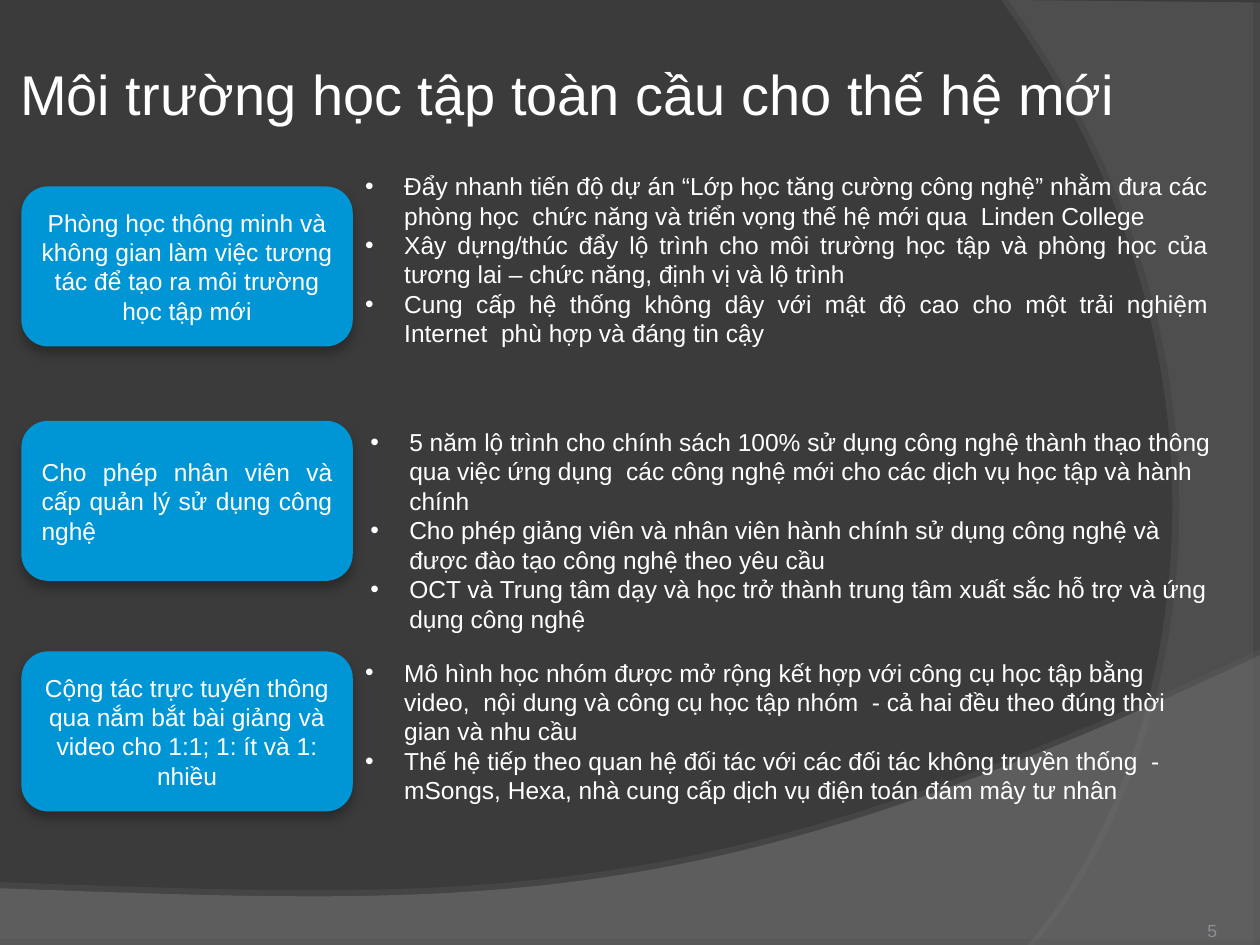
from lxml import etree
from pptx import Presentation
from pptx.dml.color import RGBColor
from pptx.enum.shapes import MSO_SHAPE
from pptx.enum.text import MSO_ANCHOR, MSO_AUTO_SIZE, PP_ALIGN
from pptx.oxml.ns import qn
from pptx.util import Inches, Pt

ROUNDED = MSO_SHAPE.ROUNDED_RECTANGLE
TOP, MIDDLE, BOTTOM = MSO_ANCHOR.TOP, MSO_ANCHOR.MIDDLE, MSO_ANCHOR.BOTTOM
LEFT, CENTER, RIGHT, JUSTIFY = (PP_ALIGN.LEFT, PP_ALIGN.CENTER,
                                PP_ALIGN.RIGHT, PP_ALIGN.JUSTIFY)
GROW = MSO_AUTO_SIZE.SHAPE_TO_FIT_TEXT


def rgb(value):
    return RGBColor.from_string(value)


def curve(p0, p1, p2, p3, steps=48):
    """Points along a cubic Bezier curve, without its start."""
    points = []
    for i in range(1, steps + 1):
        t = i / steps
        u = 1 - t
        points.append(tuple(u**3 * a + 3 * u * u * t * b + 3 * u * t * t * c + t**3 * d
                            for a, b, c, d in zip(p0, p1, p2, p3)))
    return points


def set_alpha(color, percent):
    etree.SubElement(color, qn("a:alpha"), val=str(percent * 1000))


class SlideBuilder:
    font = "Arial"
    white = "FFFFFF"
    accent = "0096D6"
    body_size = 14
    indent = Inches(0.31)

    def __init__(self, slide, background):
        self.slide = slide
        fill = slide.background.fill
        fill.solid()
        fill.fore_color.rgb = rgb(background)

    def shadow(self, sp, color, alpha, blur, dist, angle):
        sp.shadow.inherit = False
        effects = sp._element.spPr.find(qn("a:effectLst"))
        outer = etree.SubElement(effects, qn("a:outerShdw"), blurRad=str(Pt(blur)),
                                 dist=str(Pt(dist)), dir=str(angle * 60000),
                                 algn="ctr", rotWithShape="0")
        set_alpha(etree.SubElement(outer, qn("a:srgbClr"), val=color), alpha)

    def fill(self, sp, color):
        sp.fill.solid()
        sp.fill.fore_color.rgb = rgb(color)
        sp.line.fill.background()

    def wave(self, points, color, alpha, shadow):
        """Translucent background outline through the points, in inches."""
        emu = [(Inches(x), Inches(y)) for x, y in points]
        builder = self.slide.shapes.build_freeform(*emu[0], scale=1.0)
        builder.add_line_segments(emu[1:], close=True)
        sp = builder.convert_to_shape()
        self.fill(sp, color)
        set_alpha(sp._element.spPr.find(qn("a:solidFill"))[0], alpha)
        self.shadow(sp, *shadow)

    def paragraphs(self, tf, texts, align=LEFT, size=body_size, color=white,
                   bulleted=False):
        for i, text in enumerate(texts):
            p = tf.paragraphs[0] if i == 0 else tf.add_paragraph()
            p.alignment = align
            r = p.add_run()
            r.text = text
            r.font.name = self.font
            r.font.size = Pt(size)
            r.font.color.rgb = rgb(color)
            if bulleted:
                pPr = p._p.get_or_add_pPr()
                pPr.set("marL", str(self.indent))
                pPr.set("indent", str(-self.indent))
                etree.SubElement(pPr, qn("a:buFont"), typeface=self.font)
                etree.SubElement(pPr, qn("a:buChar"), char="•")

    def text(self, box, texts, anchor=TOP, insets=(0.1, 0.05, 0.1, 0.05), wrap=True,
             **style):
        tf = self.slide.shapes.add_textbox(*map(Inches, box)).text_frame
        tf.word_wrap = wrap
        tf.vertical_anchor = anchor
        (tf.margin_left, tf.margin_top,
         tf.margin_right, tf.margin_bottom) = map(Inches, insets)
        self.paragraphs(tf, texts, **style)
        return tf

    def title(self, box, text):
        tf = self.text(box, [text], BOTTOM, (0.05, 0.05, 0.05, 0), size=32)
        tf.paragraphs[0].line_spacing = 0.9

    def bullets(self, box, texts, align):
        tf = self.text(box, texts, align=align, bulleted=True)
        tf.auto_size = GROW

    def card(self, box, text, align):
        sp = self.slide.shapes.add_shape(ROUNDED, *map(Inches, box))
        self.fill(sp, self.accent)
        self.shadow(sp, "000000", 27, 6, 4, 90)
        sp.text_frame.word_wrap = True
        sp.text_frame.vertical_anchor = MIDDLE
        self.paragraphs(sp.text_frame, [text], align)


# card top, card text, card alignment, bullet box, bullet alignment, bullets
TOPICS = [
    (1.48, "Phòng học thông minh và không gian làm việc tương tác để tạo ra "
           "môi trường học tập mới", CENTER, (2.8, 1.31, 6.89, 1.51), JUSTIFY, [
        "Đẩy nhanh tiến độ dự án “Lớp học tăng cường công nghệ” nhằm đưa các "
        "phòng học  chức năng và triển vọng thế hệ mới qua  Linden College",
        "Xây dựng/thúc đẩy lộ trình cho môi trường học tập và phòng học của "
        "tương lai – chức năng, định vị và lộ trình",
        "Cung cấp hệ thống không dây với mật độ cao cho một trải nghiệm "
        "Internet  phù hợp và đáng tin cậy"]),
    (3.34, "Cho phép nhân viên và cấp quản lý sử dụng công nghệ",
     JUSTIFY, (2.84, 3.34, 6.89, 1.75), LEFT, [
        "5 năm lộ trình cho chính sách 100% sử dụng công nghệ thành thạo thông "
        "qua việc ứng dụng  các công nghệ mới cho các dịch vụ học tập và hành  chính",
        "Cho phép giảng viên và nhân viên hành chính sử dụng công nghệ và "
        "được đào tạo công nghệ theo yêu cầu",
        "OCT và Trung tâm dạy và học trở thành trung tâm xuất sắc hỗ trợ và ứng "
        "dụng công nghệ"]),
    (5.17, "Cộng tác trực tuyến thông qua nắm bắt bài giảng và video cho 1:1; "
           "1: ít và 1: nhiều", CENTER, (2.8, 5.17, 6.89, 1.75), LEFT, [
        "Mô hình học nhóm được mở rộng kết hợp với công cụ học tập bằng "
        "video,  nội dung và công cụ học tập nhóm  - cả hai đều theo đúng thời "
        "gian và nhu cầu",
        "Thế hệ tiếp theo quan hệ đối tác với các đối tác không truyền thống  - "
        "mSongs, Hexa, nhà cung cấp dịch vụ điện toán đám mây tư nhân"]),
]


def main():
    prs = Presentation()
    prs.slide_width, prs.slide_height = Inches(10), Inches(7.5)
    s = SlideBuilder(prs.slides.add_slide(prs.slide_layouts[6]), "3B3B3B")

    s.wave([(0, 7.05), (0, 7.5), (10, 7.5), (10, 5.2)]
           + curve((10, 5.2), (5.59, 7.29), (3.91, 7.19), (0, 7.05))[:-1],
           "7C7C7C", 45, ("808080", 35, 0, 3.5, 270))
    s.wave([(10, 0.02), (10, 7.5), (8.21, 7.5)]
           + curve((8.21, 7.5), (9.35, 6.19), (10.18, 3), (8, 0)),
           "595959", 40, ("808080", 45, 0, 4, 180))

    s.text((9.4, 7.25, 0.35, 0.26), ["5"], BOTTOM, (0.09, 0.04, 0.09, 0.04),
           wrap=False, align=RIGHT, size=10, color="8E8E95")
    s.title((0.11, 0.09, 9.39, 0.92), "Môi trường học tập toàn cầu cho thế hệ mới")
    for top, label, label_align, box, align, points in TOPICS:
        s.card((0.17, top, 2.63, 1.27), label, label_align)
        s.bullets(box, points, align)

    prs.save("out.pptx")


if __name__ == "__main__":
    main()
